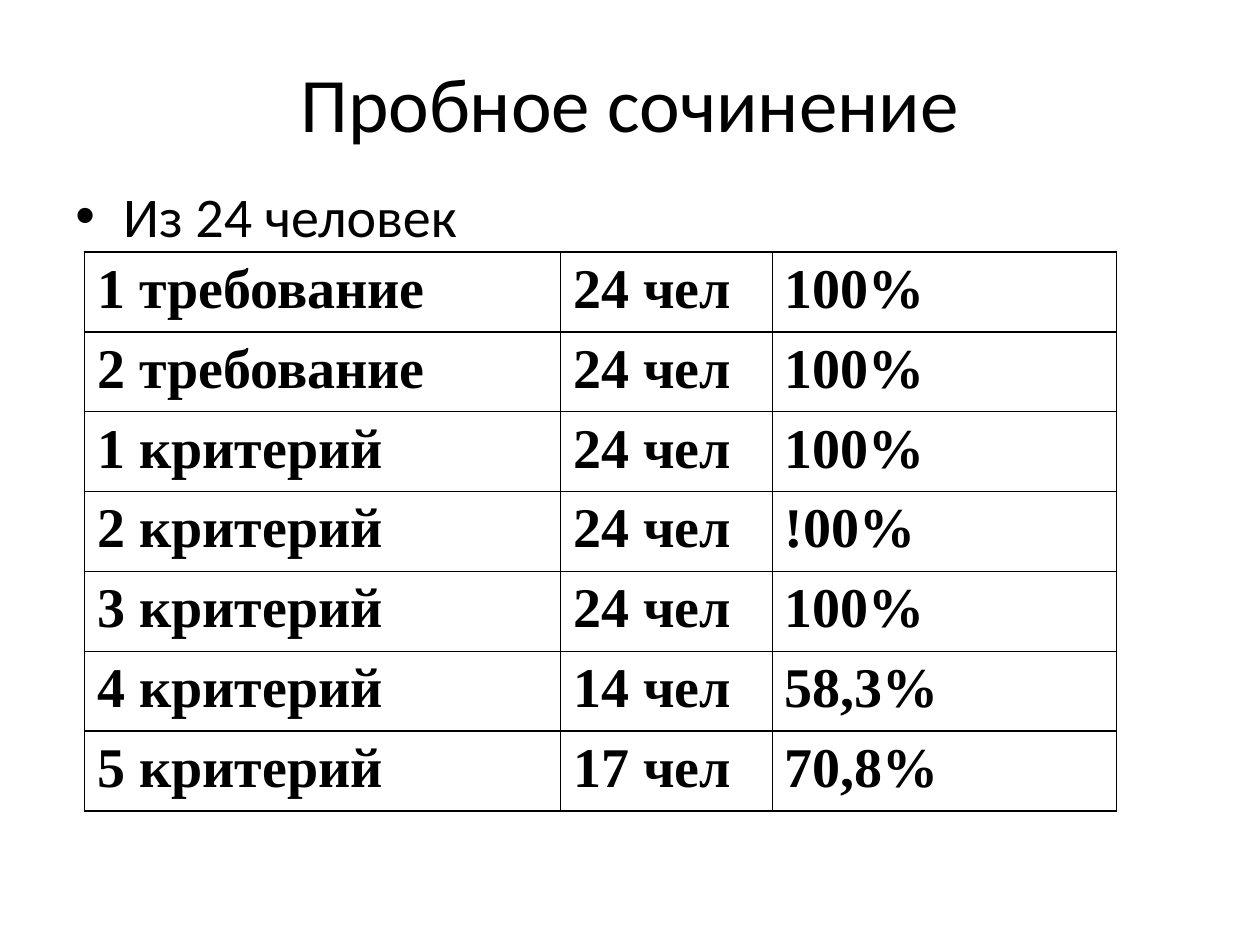
import pptx
import pptx.dml.color
import pptx.enum.text
import pptx.oxml
import pptx.oxml.ns
import pptx.util
from lxml import etree

Inches = pptx.util.Inches
Pt = pptx.util.Pt
BLACK = pptx.dml.color.RGBColor(0x00, 0x00, 0x00)
WHITE = pptx.dml.color.RGBColor(0xFF, 0xFF, 0xFF)

COLUMN_WIDTHS = (3.78, 1.68, 2.73)
ROW_HEIGHT = 0.62
RESULTS = (
    ("1 требование", "24 чел", "100%"),
    ("2 требование", "24 чел", "100%"),
    ("1 критерий", "24 чел", "100%"),
    ("2 критерий", "24 чел", "!00%"),
    ("3 критерий", "24 чел", "100%"),
    ("4 критерий", "14 чел", "58,3%"),
    ("5 критерий", "17 чел", "70,8%"),
)


def add_run(paragraph, text, size, font="Calibri", bold=False):
    """Append one formatted run to a paragraph."""
    run = paragraph.add_run()
    run.text = text
    run.font.size = Pt(size)
    run.font.name = font
    run.font.bold = bold
    run.font.color.rgb = BLACK


def add_title(slide, left, top, width, height):
    """Place and format the title placeholder."""
    title = slide.shapes.title
    title.left, title.top, title.width, title.height = map(Inches, (left, top, width, height))
    title.text_frame.vertical_anchor = pptx.enum.text.MSO_ANCHOR.MIDDLE
    heading = title.text_frame.paragraphs[0]
    heading.alignment = pptx.enum.text.PP_ALIGN.CENTER
    add_run(heading, "Пробное сочинение", 44)


def add_participants(slide, left, top, width, height):
    """Add the bulleted line with the number of participants."""
    participants = slide.shapes.add_textbox(*map(Inches, (left, top, width, height)))
    participants.text_frame.word_wrap = True
    line = participants.text_frame.paragraphs[0]
    line.space_before = Pt(6.4)
    add_run(line, "Из 24 человек", 32)
    properties = line._p.get_or_add_pPr()
    properties.set("marL", str(Inches(0.38)))
    properties.set("indent", str(-Inches(0.38)))
    etree.SubElement(properties, pptx.oxml.ns.qn("a:buFont"), typeface="Arial")
    etree.SubElement(properties, pptx.oxml.ns.qn("a:buChar"), char="•")


def add_borders(cell):
    """Draw a thin black line on every side of a cell."""
    properties = cell._tc.get_or_add_tcPr()
    for side in ("lnL", "lnR", "lnT", "lnB"):
        border = etree.SubElement(properties, pptx.oxml.ns.qn(f"a:{side}"), w=str(Pt(1)))
        fill = etree.SubElement(border, pptx.oxml.ns.qn("a:solidFill"))
        etree.SubElement(fill, pptx.oxml.ns.qn("a:srgbClr"), val=str(BLACK))


def add_results(slide, left, top):
    """Add the table of results by requirement and criterion."""
    results = slide.shapes.add_table(
        len(RESULTS), len(COLUMN_WIDTHS), Inches(left), Inches(top),
        Inches(sum(COLUMN_WIDTHS)), Inches(ROW_HEIGHT * len(RESULTS)),
    ).table
    results.first_row = False
    results.horz_banding = False
    for column, width in zip(results.columns, COLUMN_WIDTHS):
        column.width = Inches(width)
    for row, values in zip(results.rows, RESULTS):
        row.height = Inches(ROW_HEIGHT)
        for cell, value in zip(row.cells, values):
            add_borders(cell)
            cell.fill.background()
            add_run(cell.text_frame.paragraphs[0], value, 32, "Times New Roman", True)


def main():
    """Build the slide and save it."""
    presentation = pptx.Presentation()
    presentation.slide_width = Inches(10)
    presentation.slide_height = Inches(7.5)
    slide = presentation.slides.add_slide(presentation.slide_layouts[5])
    slide.background.fill.solid()
    slide.background.fill.fore_color.rgb = WHITE
    add_title(slide, 0.5, 0.3, 9, 1.01)
    add_participants(slide, 0.5, 1.39, 9, 4.95)
    add_results(slide, 0.67, 2)
    presentation.save("out.pptx")


if __name__ == "__main__":
    main()
